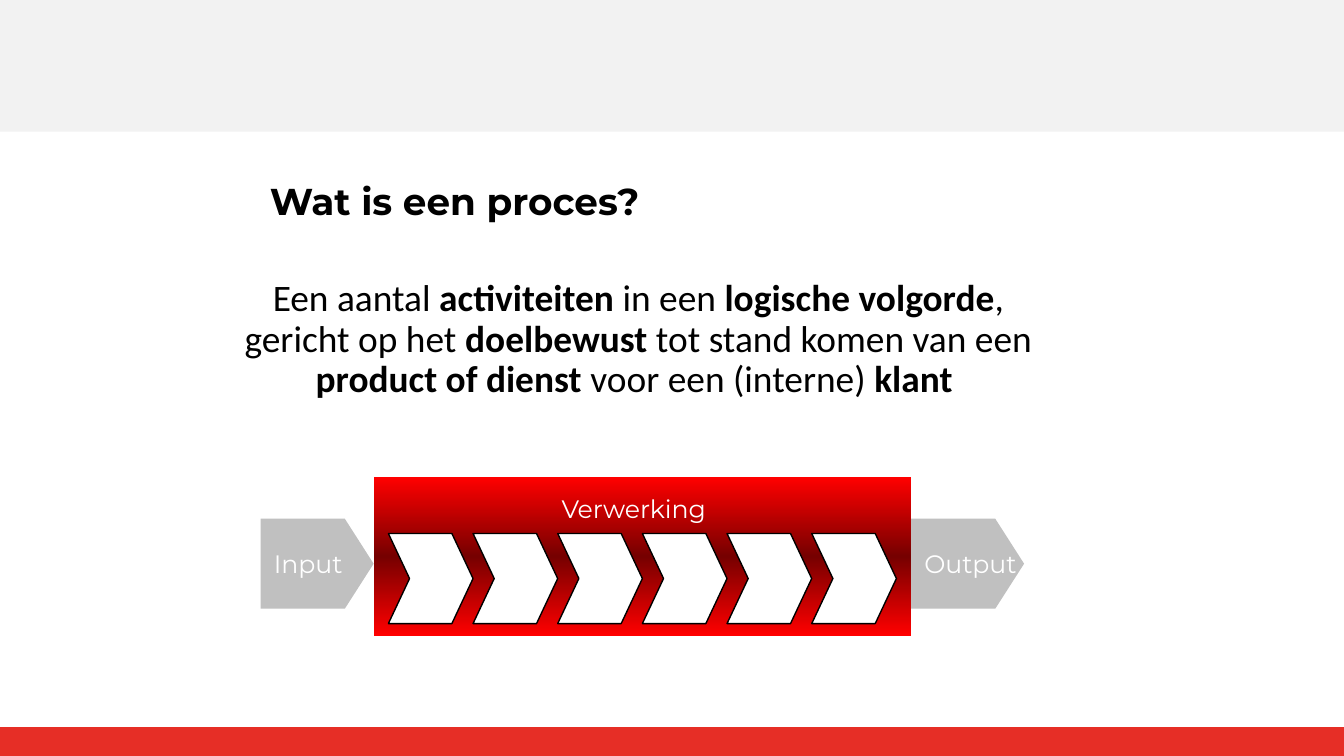
"""Build a slide that explains what a process is."""
import copy
from dataclasses import dataclass

import pptx
import pptx.dml.color
import pptx.enum.shapes
import pptx.enum.text
import pptx.oxml.ns
import pptx.util

Inches = pptx.util.Inches
Shapes = pptx.enum.shapes.MSO_SHAPE
Align = pptx.enum.text.PP_ALIGN
Anchor = pptx.enum.text.MSO_ANCHOR
AutoSize = pptx.enum.text.MSO_AUTO_SIZE

WIDTH = 10
HEIGHT = WIDTH * 9 / 16
FOOTER_TOP = 5.41


@dataclass(frozen=True)
class Theme:
    """Hold the colours, fonts and type sizes."""
    header: str = "F2F2F2"
    footer: str = "E62E26"
    process: tuple = ("FF0000", "760000", "FF0000")
    step: str = "FFFFFF"
    flow: str = "C0C0C0"
    dark: str = "000000"
    light: str = "FFFFFF"
    heading_font: str = "Montserrat"
    body_font: str = "Calibri"
    large: float = 20
    small: float = 13.5


THEME = Theme()


def rgb(code):
    """Turn a hex code into a colour."""
    return pptx.dml.color.RGBColor.from_string(code)


def add_shape(page, kind, place, fill, line=None, adjust=None):
    """Add a preset shape with a plain fill and an optional outline."""
    shape = page.shapes.add_shape(kind, *map(Inches, place))
    shape.shadow.inherit = False
    shape.fill.solid()
    shape.fill.fore_color.rgb = rgb(fill)
    if line:
        shape.line.color.rgb = rgb(line)
        shape.line.width = pptx.util.Pt(0.75)
    else:
        shape.line.fill.background()
    if adjust is not None:
        shape.adjustments[0] = adjust
    return shape


def shade(shape, colours):
    """Fill a shape with an even vertical gradient."""
    shape.fill.gradient()
    shape.fill.gradient_angle = 270
    stops = shape._element.spPr.find(".//" + pptx.oxml.ns.qn("a:gsLst"))
    while len(stops) < len(colours):
        stops.append(copy.deepcopy(stops[-1]))
    for index, (stop, colour) in enumerate(zip(shape.fill.gradient_stops, colours)):
        stop.position = index / (len(colours) - 1)
        stop.color.rgb = rgb(colour)


def write(shape, spans, font, size, colour, align=Align.LEFT, anchor=Anchor.TOP, wrap=True):
    """Write one paragraph from pairs of text and boldness."""
    frame = shape.text_frame
    frame.word_wrap = wrap
    frame.vertical_anchor = anchor
    para = frame.paragraphs[0]
    para.alignment = align
    for text, bold in spans:
        span = para.add_run()
        span.text = text
        span.font.name = font
        span.font.size = pptx.util.Pt(size)
        span.font.bold = bold
        span.font.color.rgb = rgb(colour)
    return para


def add_text(page, place, spans, font, size, colour, grow=True, **layout):
    """Add a text box with one paragraph."""
    box = page.shapes.add_textbox(*map(Inches, place))
    box.text_frame.auto_size = AutoSize.SHAPE_TO_FIT_TEXT if grow else AutoSize.NONE
    return write(box, spans, font, size, colour, **layout)


def add_flow(page, left, label):
    """Add a labelled arrow block for what enters or leaves the process."""
    block = add_shape(page, Shapes.PENTAGON, (left, 3.86, 0.84, 0.67), THEME.flow, adjust=0.32)
    write(block, [(label, False)], THEME.heading_font, THEME.small, THEME.light,
          anchor=Anchor.MIDDLE, wrap=False)


def add_process(page):
    """Add the process block with its row of steps."""
    block = add_shape(page, Shapes.RECTANGLE, (2.78, 3.55, 4, 1.18), THEME.process[0])
    shade(block, THEME.process)
    for index in range(6):
        add_shape(page, Shapes.CHEVRON, (2.89 + 0.63 * index, 3.97, 0.63, 0.67),
                  THEME.step, THEME.dark, 0.25)
    add_text(page, (4.08, 3.62, 1.39, 0.33), [("Verwerking", False)],
             THEME.heading_font, THEME.small, THEME.light, wrap=False)


def add_definition(page):
    """Add the definition with its key words in bold."""
    spans = [
        ("Een aantal ", False), ("activiteiten", True),
        (" in een ", False), ("logische volgorde", True),
        (", gericht op het ", False), ("doelbewust", True),
        (" tot stand komen van een ", False), ("product of dienst", True),
        (" voor een (interne) ", False), ("klant ", True),
    ]
    para = add_text(page, (1.53, 2.03, 6.44, 1.01), spans, THEME.body_font,
                    THEME.large, THEME.dark, align=Align.CENTER)
    para.line_spacing = 0.9


def main():
    """Build and save the deck."""
    deck = pptx.Presentation()
    deck.slide_width, deck.slide_height = Inches(WIDTH), Inches(HEIGHT)
    page = deck.slides.add_slide(deck.slide_layouts[6])
    add_shape(page, Shapes.RECTANGLE, (0, 0, WIDTH, 0.98), THEME.header)
    add_shape(page, Shapes.RECTANGLE, (0, FOOTER_TOP, WIDTH, HEIGHT - FOOTER_TOP), THEME.footer)
    add_definition(page)
    add_process(page)
    add_flow(page, 1.94, "Input")
    add_flow(page, 6.78, "Output")
    add_text(page, (1.91, 0.89, 6.38, 1.21), [("Wat is een proces?", True)],
             THEME.heading_font, THEME.large, THEME.dark, grow=False, anchor=Anchor.MIDDLE)
    deck.save("out.pptx")


if __name__ == "__main__":
    main()
